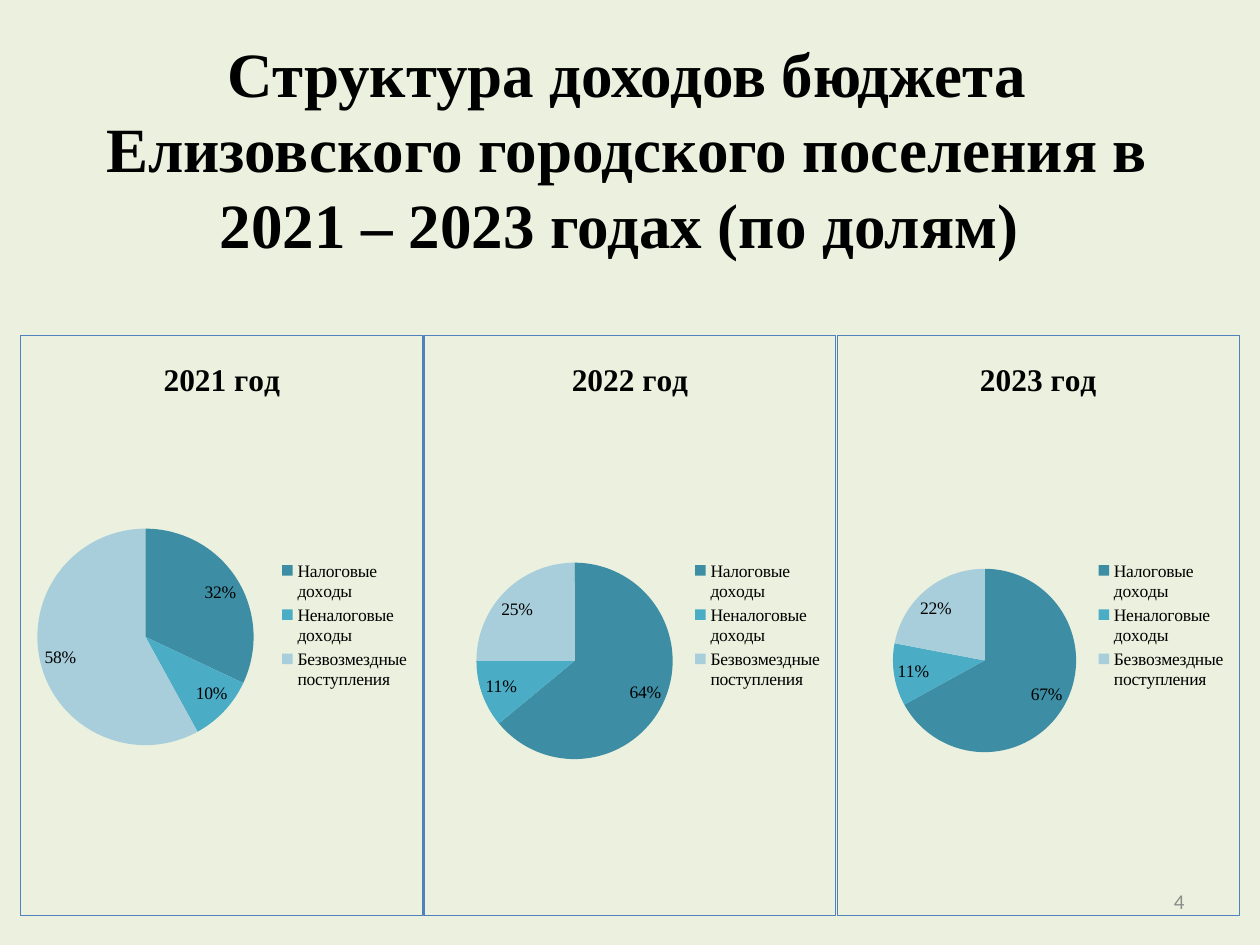
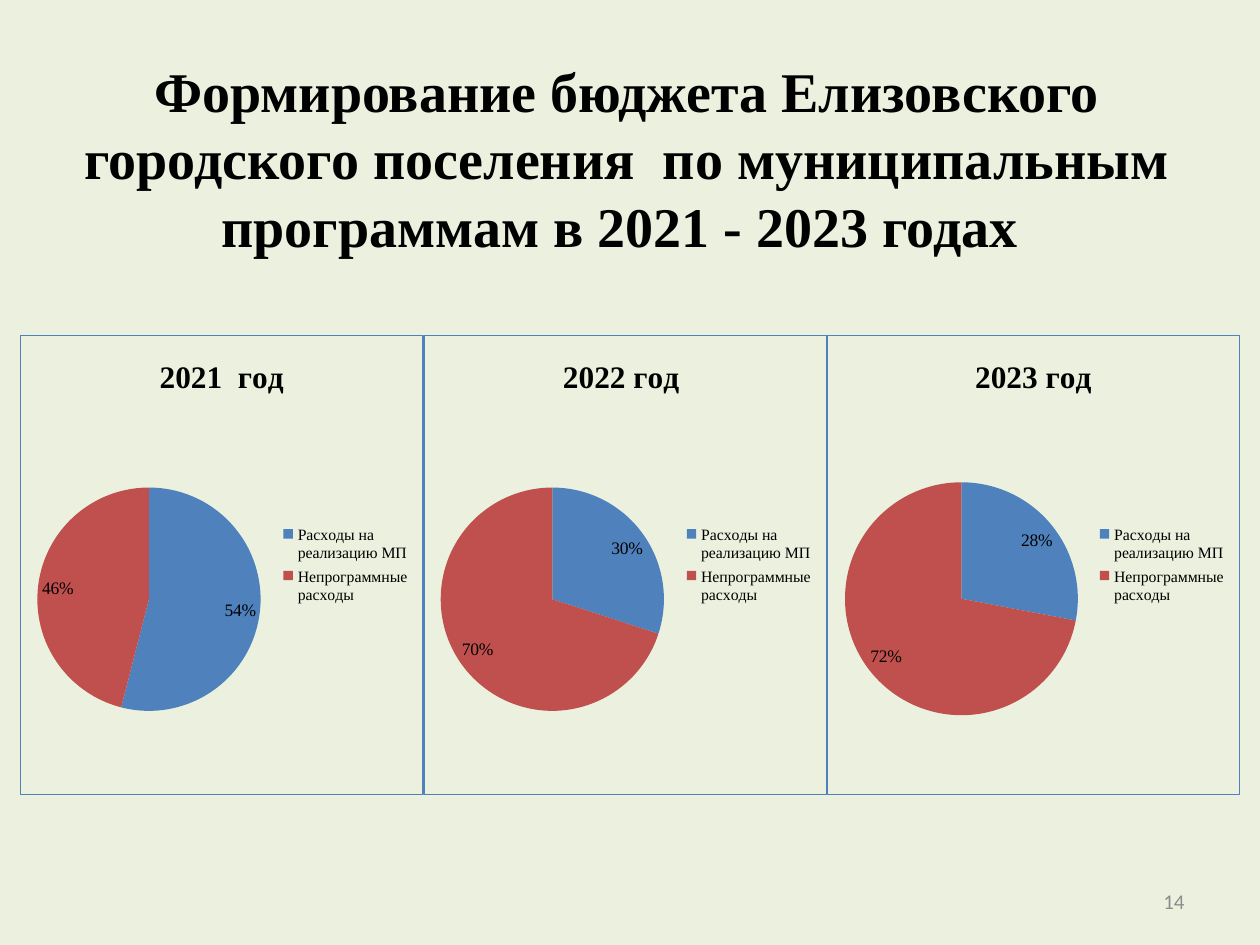
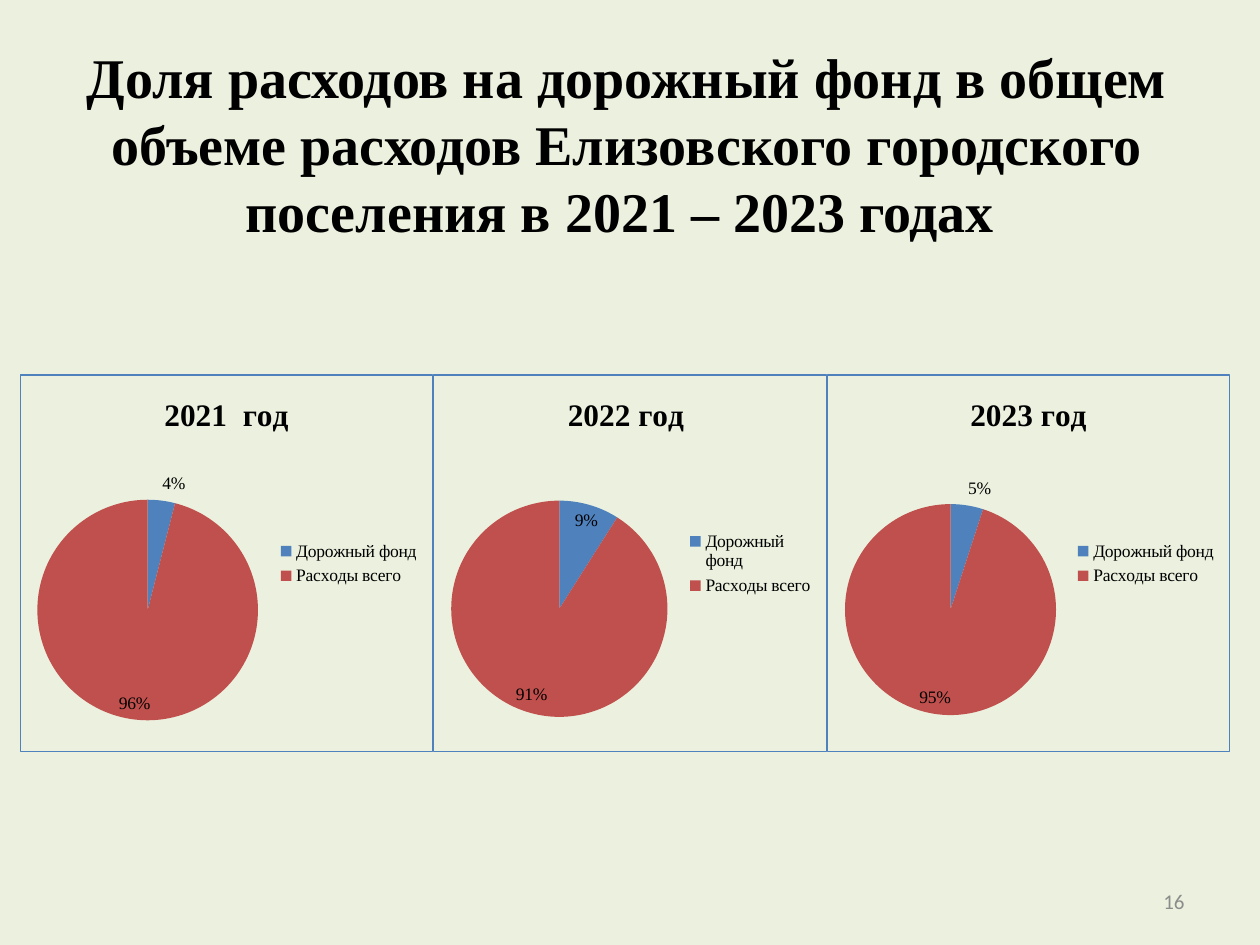
from dataclasses import dataclass
from itertools import pairwise

from lxml.etree import SubElement
from pptx import Presentation
from pptx.chart.chart import Chart
from pptx.chart.data import CategoryChartData
from pptx.dml.color import RGBColor
from pptx.enum.chart import XL_CHART_TYPE, XL_LABEL_POSITION, XL_LEGEND_POSITION
from pptx.enum.text import MSO_ANCHOR, MSO_AUTO_SIZE, PP_ALIGN
from pptx.oxml.ns import qn
from pptx.util import Pt

BACKGROUND = RGBColor(0xEB, 0xF1, 0xDE)
BLACK = RGBColor(0x00, 0x00, 0x00)
GREY = RGBColor(0x8C, 0x8C, 0x8C)
BLUE = RGBColor(0x4F, 0x81, 0xBD)
RED = RGBColor(0xC0, 0x50, 0x4D)
DARK_TEAL = RGBColor(0x3D, 0x8E, 0xA4)
TEAL = RGBColor(0x4B, 0xAC, 0xC6)
PALE_TEAL = RGBColor(0xA8, 0xCE, 0xDB)
SERIF = "Times New Roman"
SANS = "Calibri"


@dataclass(frozen=True)
class Pie:
    """One year's shares and the place of its circle on the slide, in points."""

    year: str
    shares: tuple[int, ...]
    left: float
    top: float
    diameter: float


@dataclass(frozen=True)
class BudgetSlide:
    """A title above a row of adjoining pie charts, in points."""

    title: str
    title_size: int
    title_top: float
    title_height: float
    number: int
    categories: tuple[str, ...]
    colors: tuple[RGBColor, ...]
    edges: tuple[float, ...]
    top: float
    height: float
    pies: tuple[Pie, ...]
    legend_size: int = 10


SLIDES = (
    BudgetSlide(
        "Структура доходов бюджета Елизовского городского поселения в 2021 – 2023 годах (по долям) ",
        36, 16.5, 135.5, 4,
        ("Налоговые доходы", "Неналоговые доходы", "Безвозмездные поступления"),
        (DARK_TEAL, TEAL, PALE_TEAL),
        (11.5, 242, 478, 708.5), 191.5, 332,
        (
            Pie("2021 год", (32, 10, 58), 21, 302, 124),
            Pie("2022 год", (64, 11, 25), 272, 321.5, 112.5),
            Pie("2023 год", (67, 11, 22), 510, 325, 105),
        ),
    ),
    BudgetSlide(
        "Формирование бюджета Елизовского городского поселения  по муниципальным программам в 2021 - 2023 годах ",
        32, 62, 56, 14,
        ("Расходы на реализацию МП", "Непрограммные расходы"),
        (BLUE, RED),
        (11.5, 242, 472.5, 708.5), 191.5, 263,
        (
            Pie("2021  год", (54, 46), 21, 278.5, 128),
            Pie("2022 год ", (30, 70), 251.5, 278.5, 128),
            Pie("2023 год", (28, 72), 482.5, 275.5, 133.5),
        ),
        legend_size=9,
    ),
    BudgetSlide(
        "Доля расходов на дорожный фонд в общем объеме расходов Елизовского городского поселения в 2021 – 2023 годах ",
        32, 11.5, 140.5, 16,
        ("Дорожный фонд ", "Расходы всего"),
        (BLUE, RED),
        (11.5, 247.5, 472.5, 703), 214, 216,
        (
            Pie("2021  год", (4, 96), 21, 285.5, 126.5),
            Pie("2022 год ", (9, 91), 257.5, 286, 124),
            Pie("2023 год", (5, 95), 482.5, 288, 121),
        ),
    ),
)


def write_text(frame, text: str, *, size: float, font: str = SERIF, color: RGBColor = BLACK,
               bold: bool = False, align: PP_ALIGN = PP_ALIGN.CENTER) -> None:
    """Put formatted text into a vertically centred, wrapping frame."""
    frame.word_wrap = True
    frame.auto_size = MSO_AUTO_SIZE.NONE
    frame.vertical_anchor = MSO_ANCHOR.MIDDLE
    paragraph = frame.paragraphs[0]
    paragraph.alignment = align
    run = paragraph.add_run()
    run.text = text
    run.font.name = font
    run.font.size = Pt(size)
    run.font.bold = bold
    run.font.color.rgb = color


def outline_chart(chart: Chart) -> None:
    """Give the chart area a thin blue border and no fill."""
    properties = chart.element.makeelement(qn("c:spPr"))
    SubElement(properties, qn("a:noFill"))
    line = SubElement(properties, qn("a:ln"), w=str(Pt(0.75)))
    fill = SubElement(line, qn("a:solidFill"))
    SubElement(fill, qn("a:srgbClr"), val=str(BLUE))
    chart.element.find(qn("c:chart")).addnext(properties)


def place_pie(chart: Chart, x: float, y: float, width: float, height: float) -> None:
    """Fix the circle's place, given as fractions of the chart area."""
    plot_area = chart.element.find(qn("c:chart")).find(qn("c:plotArea"))
    for automatic in plot_area.findall(qn("c:layout")):
        plot_area.remove(automatic)
    layout = plot_area.makeelement(qn("c:layout"))
    manual = SubElement(layout, qn("c:manualLayout"))
    settings = {"layoutTarget": "inner", "xMode": "edge", "yMode": "edge",
                "x": x, "y": y, "w": width, "h": height}
    for name, value in settings.items():
        SubElement(manual, qn(f"c:{name}"), val=str(value))
    plot_area.insert(0, layout)


def add_pie(slide, content: BudgetSlide, pie: Pie, left: float, right: float) -> None:
    """Draw one year's pie chart between two edges of the row."""
    data = CategoryChartData()
    data.categories = content.categories
    data.add_series(pie.year, pie.shares)
    width = right - left
    chart = slide.shapes.add_chart(XL_CHART_TYPE.PIE, Pt(left), Pt(content.top),
                                   Pt(width), Pt(content.height), data).chart
    chart.font.name = SERIF
    chart.font.size = Pt(10)
    chart.font.color.rgb = BLACK
    outline_chart(chart)
    place_pie(chart, (pie.left - left) / width, (pie.top - content.top) / content.height,
              pie.diameter / width, pie.diameter / content.height)

    write_chart_title(chart, pie.year)
    chart.has_legend = True
    chart.legend.position = XL_LEGEND_POSITION.RIGHT
    chart.legend.include_in_layout = False
    chart.legend.font.name = SERIF
    chart.legend.font.size = Pt(content.legend_size)

    plot = chart.plots[0]
    plot.vary_by_categories = True
    for index, color in enumerate(content.colors):
        fill = plot.series[0].points[index].format.fill
        fill.solid()
        fill.fore_color.rgb = color
    plot.has_data_labels = True
    labels = plot.data_labels
    labels.show_percentage = True
    labels.show_value = False
    labels.number_format = "0%"
    labels.number_format_is_linked = False
    labels.position = XL_LABEL_POSITION.BEST_FIT


def write_chart_title(chart: Chart, text: str) -> None:
    """Set the bold heading of a chart."""
    chart.has_title = True
    chart.chart_title.include_in_layout = False
    write_text(chart.chart_title.text_frame, text, size=18, bold=True)


def add_budget_slide(presentation, content: BudgetSlide) -> None:
    """Build a slide with its title, row of pies and slide number."""
    slide = presentation.slides.add_slide(presentation.slide_layouts[5])
    title = slide.shapes.title
    title.left, title.top = Pt(22.5), Pt(content.title_top)
    title.width, title.height = Pt(671.5), Pt(content.title_height)
    write_text(title.text_frame, content.title, size=content.title_size, bold=True)
    for pie, (left, right) in zip(content.pies, pairwise(content.edges)):
        add_pie(slide, content, pie, left, right)
    number = slide.shapes.add_textbox(Pt(516), Pt(500.5), Pt(168), Pt(29))
    write_text(number.text_frame, str(content.number), size=12, font=SANS, color=GREY,
               align=PP_ALIGN.RIGHT)


def main() -> None:
    """Build and save the presentation."""
    presentation = Presentation()
    presentation.slide_width, presentation.slide_height = Pt(720), Pt(540)
    background = presentation.slide_master.background.fill
    background.solid()
    background.fore_color.rgb = BACKGROUND
    for content in SLIDES:
        add_budget_slide(presentation, content)
    presentation.save("out.pptx")


if __name__ == "__main__":
    main()
